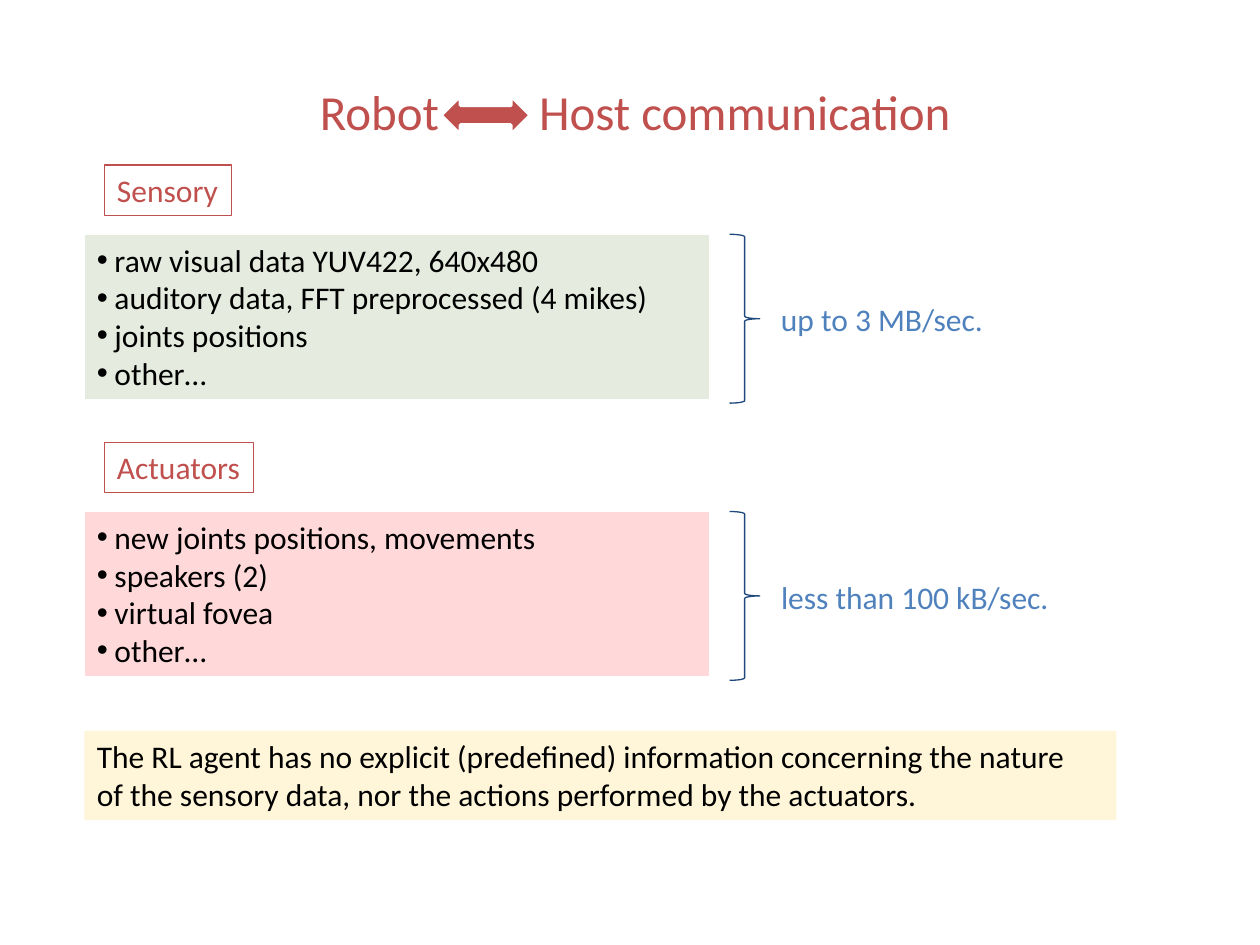
from lxml import etree
from pptx import Presentation
from pptx.dml.color import RGBColor
from pptx.enum.shapes import MSO_SHAPE
from pptx.enum.text import MSO_ANCHOR, MSO_AUTO_SIZE, PP_ALIGN
from pptx.oxml.ns import qn
from pptx.util import Emu, Inches, Pt

RECT = MSO_SHAPE.RECTANGLE
ARROW = MSO_SHAPE.LEFT_RIGHT_ARROW
BRACE = MSO_SHAPE.RIGHT_BRACE
TOP = MSO_ANCHOR.TOP
GROW = MSO_AUTO_SIZE.SHAPE_TO_FIT_TEXT
LEFT = PP_ALIGN.LEFT

COLS, ROWS = 100, 75
WHITE, BLACK, RED = "FFFFFF", "000000", "C0504D"
NAVY, BLUE = "1F497D", "4F81BD"
GREEN, PINK, AMBER = "57812A", "FF0000", "FFC000"


def color(value):
    return RGBColor.from_string(value)


def write(sp, text, size=18, ink=BLACK, wrap=True, bullet=False, tab=None):
    tf = sp.text_frame
    tf.word_wrap = wrap
    tf.auto_size = GROW
    tf.vertical_anchor = TOP
    for i, line in enumerate(text.split("\n")):
        p = tf.paragraphs[0] if i == 0 else tf.add_paragraph()
        p.alignment = LEFT
        r = p.add_run()
        r.text = line
        r.font.name = "Calibri"
        r.font.size = Pt(size)
        r.font.color.rgb = color(ink)
        pPr = p._p.get_or_add_pPr()
        if bullet:
            pPr.set("marL", str(Inches(0.14)))
            pPr.set("indent", str(-Inches(0.14)))
            etree.SubElement(pPr, qn("a:buFont"), typeface="Arial")
            etree.SubElement(pPr, qn("a:buChar"), char="•")
        if tab:
            tabs = etree.SubElement(pPr, qn("a:tabLst"))
            etree.SubElement(tabs, qn("a:tab"), pos=str(Inches(tab)), algn="l")


class Deck:
    def __init__(self):
        self.prs = Presentation()
        self.prs.slide_width = Inches(10)
        self.prs.slide_height = Inches(7.5)
        self.s = self.prs.slides.add_slide(self.prs.slide_layouts[6])
        self.s.background.fill.solid()
        self.s.background.fill.fore_color.rgb = color(WHITE)

    def frame(self, col, row, cols, rows):
        x = self.prs.slide_width / COLS
        y = self.prs.slide_height / ROWS
        return [Emu(round(v)) for v in (col * x, row * y, cols * x, rows * y)]

    def shape(self, kind, at, fill=WHITE, alpha=None, line=None, weight=0.75):
        sp = self.s.shapes.add_shape(kind, *self.frame(*at))
        sp.shadow.inherit = False
        sp.fill.solid()
        sp.fill.fore_color.rgb = color(fill)
        if alpha:
            clr = sp.fill._xPr.find(qn("a:solidFill"))[0]
            etree.SubElement(clr, qn("a:alpha"), val=str(alpha * 1000))
        if line:
            sp.line.color.rgb = color(line)
            sp.line.width = Pt(weight)
        else:
            sp.line.fill.background()
        return sp

    def panel(self, at, text, fill, line=None, bullet=False):
        write(self.shape(RECT, at, fill, alpha=15, line=line), text, bullet=bullet)

    def tag(self, at, text):
        write(self.shape(RECT, at, line=RED), text, ink=RED, wrap=False)

    def label(self, at, text):
        write(self.s.shapes.add_textbox(*self.frame(*at)), text, ink=BLUE, wrap=False)

    def title(self, at, text, tab):
        write(self.shape(RECT, at), text, size=28, ink=RED, tab=tab)

    def section(self, row, name, name_cols, items, fill, rate, rate_cols):
        self.panel((6.7, row + 5.5, 49.6, 13.1), "\n".join(items), fill, WHITE, True)
        self.tag((8.3, row, name_cols, 4), name)
        self.shape(BRACE, (57.9, row + 5.5, 2.4, 13.4), line=NAVY)
        self.label((61, row + 10.25, rate_cols, 4), rate)


def main():
    deck = Deck()
    deck.title((24.4, 6, 52.7, 5.7), "Robot\tHost communication", 1.74)
    deck.shape(ARROW, (35, 7.6, 7.1, 3.1), RED, line=WHITE, weight=2)
    sections = [
        ("Sensory", 10.1,
         ["raw visual data YUV422, 640x480",
          "auditory data, FFT preprocessed (4 mikes)",
          "joints positions", "other…"],
         GREEN, "up to 3 MB/sec.", 18.3),
        ("Actuators", 11.8,
         ["new joints positions, movements",
          "speakers (2)", "virtual fovea", "other…"],
         PINK, "less than 100 kB/sec.", 23.5),
    ]
    for i, section in enumerate(sections):
        deck.section(13.1 + 22 * i, *section)
    deck.panel(
        (6.7, 58, 81.9, 7.1),
        "The RL agent has no explicit (predefined) information concerning the nature\n"
        "of the sensory data, nor the actions performed by the actuators.",
        AMBER)
    deck.prs.save("out.pptx")


if __name__ == "__main__":
    main()
